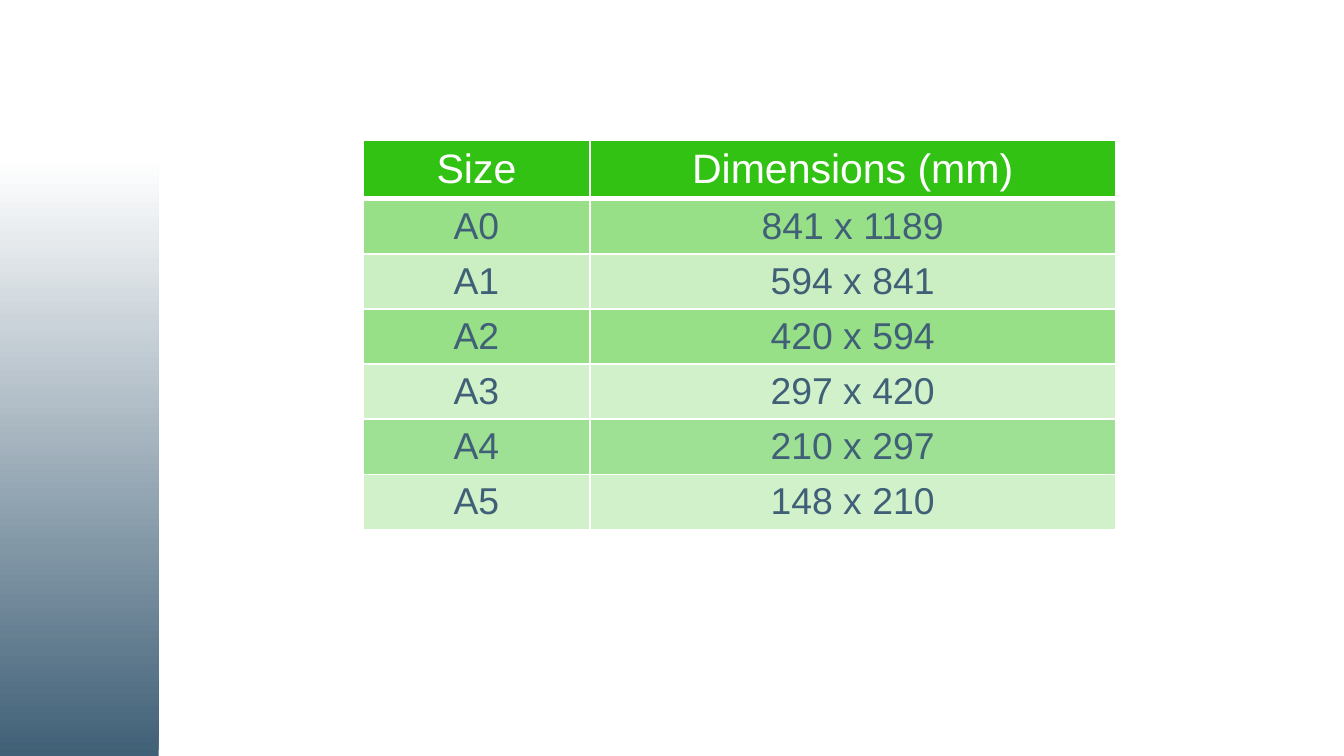
import pptx
import pptx.dml.color
import pptx.enum.shapes
import pptx.enum.text
import pptx.oxml
import pptx.oxml.ns
import pptx.util
from dataclasses import dataclass

Inches = pptx.util.Inches


@dataclass(frozen=True)
class Theme:
    font: str = "Arial"
    slate: str = "406077"
    white: str = "FFFFFF"
    green: str = "32C213"
    mid_green: str = "9FE194"
    pale_green: str = "D1F1CB"
    header_size: int = 22
    body_size: int = 20


def rgb(value):
    return pptx.dml.color.RGBColor.from_string(value)


class SlideBuilder:
    def __init__(self, slide, theme):
        self.slide = slide
        self.theme = theme

    def gradient_band(self, left, top, width, height):
        """Side band fading upwards from slate to white."""
        band = self.slide.shapes.add_shape(
            pptx.enum.shapes.MSO_SHAPE.RECTANGLE, left, top, width, height)
        band.shadow.inherit = False
        band.line.fill.background()
        band.fill.gradient()
        band.fill.gradient_angle = 90
        stops = ((0, self.theme.slate), (0.79, self.theme.white))
        for stop, (position, color) in zip(band.fill.gradient_stops, stops):
            stop.position = position
            stop.color.rgb = rgb(color)

    def table(self, left, top, widths, heights, rows, fills):
        """Table with a header row; fills holds (colour, opacity %) per row."""
        grid = self.slide.shapes.add_table(
            len(rows), len(widths),
            *map(Inches, (left, top, sum(widths), sum(heights)))).table
        for column, width in zip(grid.columns, widths):
            column.width = Inches(width)
        for r, (texts, height, fill) in enumerate(zip(rows, heights, fills)):
            grid.rows[r].height = Inches(height)
            for c, text in enumerate(texts):
                self.cell(grid.cell(r, c), text, fill, r)

    def cell(self, cell, text, fill, row):
        theme = self.theme
        header = row == 0
        # The thick rule under the header is shared with the first body row
        self.borders(cell, {"L": 1, "R": 1, "T": 3 if row == 1 else 1,
                            "B": 3 if header else 1})
        color, opacity = fill
        cell.fill.solid()
        cell.fill.fore_color.rgb = rgb(color)
        if opacity < 100:
            solid = cell._tc.tcPr.find(pptx.oxml.ns.qn("a:solidFill"))
            solid[0].append(pptx.oxml.parse_xml(
                f'<a:alpha {pptx.oxml.ns.nsdecls("a")} val="{opacity * 1000}"/>'))
        placement = {"margin_top": Inches(0.04), "margin_bottom": Inches(0.04),
                     "vertical_anchor": pptx.enum.text.MSO_ANCHOR.MIDDLE}
        for name, value in placement.items():
            setattr(cell, name, value)
        cell.text = text
        paragraph = cell.text_frame.paragraphs[0]
        paragraph.alignment = pptx.enum.text.PP_ALIGN.CENTER
        font = paragraph.runs[0].font
        size = theme.header_size if header else theme.body_size
        for name, value in {"name": theme.font, "bold": False,
                            "size": pptx.util.Pt(size)}.items():
            setattr(font, name, value)
        font.color.rgb = rgb(theme.white if header else theme.slate)

    def borders(self, cell, widths):
        properties = cell._tc.get_or_add_tcPr()
        for side, width in widths.items():
            properties.append(pptx.oxml.parse_xml(
                f'<a:ln{side} {pptx.oxml.ns.nsdecls("a")} w="{pptx.util.Pt(width)}">'
                f'<a:solidFill><a:srgbClr val="{self.theme.white}"/></a:solidFill>'
                f'</a:ln{side}>'))


def main():
    deck = pptx.Presentation()
    # Widescreen, 16 to 9
    deck.slide_width = Inches(10)
    deck.slide_height = deck.slide_width * 9 // 16
    theme = Theme()
    builder = SlideBuilder(deck.slides.add_slide(deck.slide_layouts[6]), theme)

    # Side band
    builder.gradient_band(0, 0, Inches(1.18), deck.slide_height)

    # Paper sizes
    paper_sizes = [("Size", "Dimensions (mm)"),
                   ("A0", "841 x 1189"), ("A1", "594 x 841"),
                   ("A2", "420 x 594"), ("A3", "297 x 420"),
                   ("A4", "210 x 297"), ("A5", "148 x 210")]
    row_fills = [(theme.green, 100), (theme.green, 50), (theme.green, 25),
                 (theme.green, 50), (theme.pale_green, 100),
                 (theme.mid_green, 100), (theme.pale_green, 100)]
    row_heights = [0.44] + [0.41] * (len(paper_sizes) - 1)
    builder.table(2.7, 1.04, (1.69, 3.91), row_heights, paper_sizes, row_fills)

    deck.save("out.pptx")


if __name__ == "__main__":
    main()
